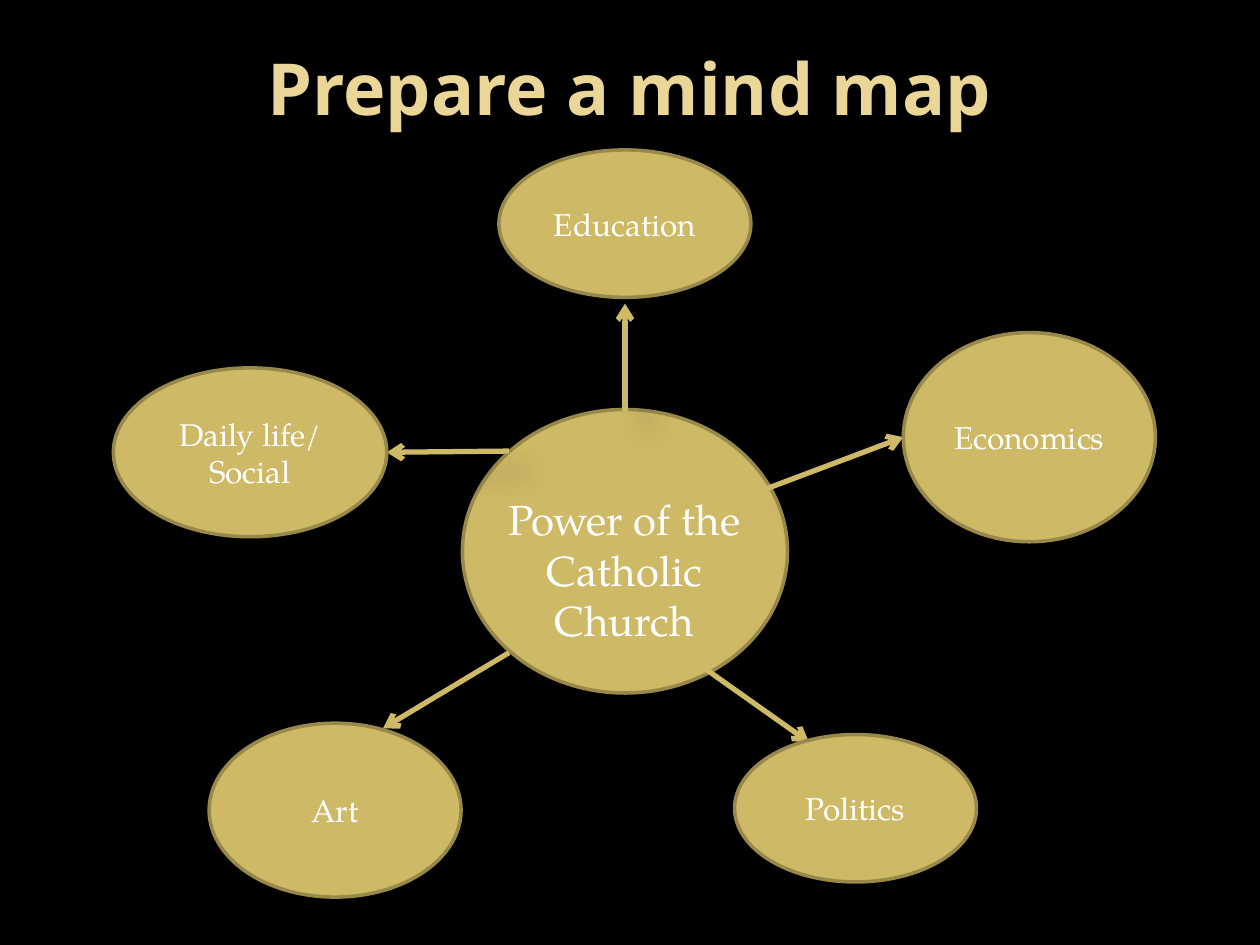
import pptx
import pptx.dml.color
import pptx.enum.shapes
import pptx.enum.text
import pptx.oxml
import pptx.oxml.ns
import pptx.util
from lxml import etree

Inches = pptx.util.Inches
Pt = pptx.util.Pt
COLORS = {"background": "000000", "title": "EAD696", "gold": "CEB966",
          "outline": "98894B", "text": "FFFFFF", "shadow": "000000"}
TITLE_FONT = "Open Sans"
BODY_FONT = "TeX Gyre Pagella"

# text, (left, top, width, height)
TOPICS = [
    ("Daily life/\nSocial", (0.9, 2.92, 2.17, 1.34)),
    ("Politics", (5.83, 5.83, 1.92, 1.17)),
    ("Economics", (7.17, 2.64, 2, 1.66)),
    ("Education", (3.96, 1.19, 2, 1.17)),
    ("Art", (1.66, 5.74, 2, 1.38)),
]
# start, end, has shadow
ARROWS = [
    ((4.96, 3.26), (4.96, 2.41), True),
    ((6.08, 3.88), (7.17, 3.47), True),
    ((5.6, 5.31), (6.42, 5.89), True),
    ((4.04, 3.58), (3.07, 3.59), True),
    ((4.04, 5.18), (3.04, 5.78), False),
]


def color(name):
    return pptx.dml.color.RGBColor.from_string(COLORS[name])


def write(frame, text, font_name, size, color_name, bold=False):
    frame.text = text
    frame.word_wrap = True
    for paragraph in frame.paragraphs:
        paragraph.alignment = pptx.enum.text.PP_ALIGN.CENTER
        for run in paragraph.runs:
            run.font.name = font_name
            run.font.size = Pt(size)
            run.font.bold = bold
            run.font.color.rgb = color(color_name)


def add_title(slide, text):
    title = slide.shapes.title
    title.left, title.top = Inches(0.5), Inches(0.3)
    title.width, title.height = Inches(9), Inches(1.25)
    write(title.text_frame, text, TITLE_FONT, 41, "title", bold=True)
    title.text_frame.vertical_anchor = pptx.enum.text.MSO_ANCHOR.TOP


def add_bubble(slide, box, text=""):
    bubble = slide.shapes.add_shape(
        pptx.enum.shapes.MSO_SHAPE.OVAL, *map(Inches, box))
    bubble.shadow.inherit = False
    bubble.fill.solid()
    bubble.fill.fore_color.rgb = color("gold")
    bubble.line.color.rgb = color("outline")
    bubble.line.width = Pt(2)
    if text:
        write(bubble.text_frame, text, BODY_FONT, 18, "text")
        bubble.text_frame.vertical_anchor = pptx.enum.text.MSO_ANCHOR.MIDDLE


def add_hub(slide, text):
    """Add the central bubble with its label in a separate text box."""
    add_bubble(slide, (3.67, 3.25, 2.58, 2.25))
    label = slide.shapes.add_textbox(*map(Inches, (3.83, 3.87, 2.25, 1.31)))
    write(label.text_frame, text, BODY_FONT, 24, "text")


def add_arrow(slide, start, end, has_shadow):
    qn = pptx.oxml.ns.qn
    arrow = slide.shapes.add_connector(
        pptx.enum.shapes.MSO_CONNECTOR.STRAIGHT, *map(Inches, start + end))
    arrow.line.color.rgb = color("gold")
    arrow.line.width = Pt(3)
    etree.SubElement(arrow.line._get_or_add_ln(), qn("a:tailEnd"), type="arrow")
    effects = etree.SubElement(arrow._element.spPr, qn("a:effectLst"))
    if has_shadow:
        shadow = etree.SubElement(
            effects, qn("a:outerShdw"), blurRad=str(Pt(15)), dist=str(Pt(18)),
            dir=str(45 * 60000), rotWithShape="0")
        tint = etree.SubElement(shadow, qn("a:srgbClr"), val=COLORS["shadow"])
        etree.SubElement(tint, qn("a:alpha"), val="26000")


def main():
    deck = pptx.Presentation()
    deck.slide_width, deck.slide_height = Inches(10), Inches(7.5)
    slide = deck.slides.add_slide(deck.slide_layouts[5])
    slide.background.fill.solid()
    slide.background.fill.fore_color.rgb = color("background")

    add_title(slide, "Prepare a mind map")
    add_hub(slide, "Power of the Catholic Church")
    for start, end, has_shadow in ARROWS:
        add_arrow(slide, start, end, has_shadow)
    for text, box in TOPICS:
        add_bubble(slide, box, text)
    deck.save("out.pptx")


if __name__ == "__main__":
    main()
